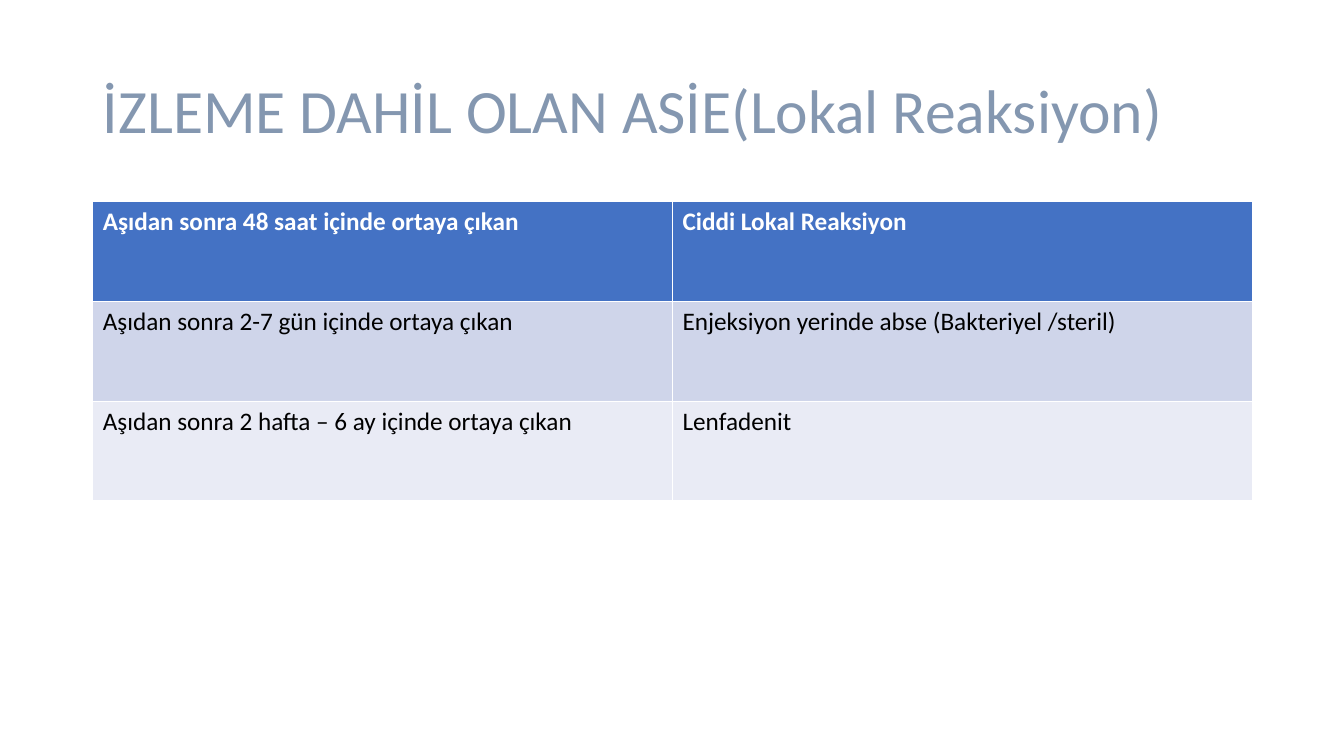
from dataclasses import dataclass

from pptx import Presentation
from pptx import util as u
from pptx.dml import color
from pptx.enum import text


@dataclass(frozen=True)
class Theme:
    font: str = "Calibri"
    title_size: int = 44
    table_size: int = 18
    title_color: str = "8497B0"
    header_text: str = "FFFFFF"
    body_text: str = "000000"
    header_fill: str = "4472C4"
    band_fills: tuple = ("CFD5EA", "E9EBF5")


def write_text(frame, content, *, font, size, ink, bold=False, line_spacing=1.0):
    paragraph = frame.paragraphs[0]
    paragraph.alignment = text.PP_ALIGN.LEFT
    paragraph.line_spacing = line_spacing
    run = paragraph.add_run()
    run.text = content
    run.font.name = font
    run.font.size = u.Pt(size)
    run.font.bold = bold
    run.font.color.rgb = color.RGBColor.from_string(ink)


class SlideBuilder:
    def __init__(self, slide, theme):
        self.slide = slide
        self.theme = theme

    def title(self, content, left, top, width, height):
        shape = self.slide.shapes.title
        shape.left, shape.top = u.Inches(left), u.Inches(top)
        shape.width, shape.height = u.Inches(width), u.Inches(height)
        frame = shape.text_frame
        frame.word_wrap = True
        frame.auto_size = text.MSO_AUTO_SIZE.NONE
        frame.vertical_anchor = text.MSO_ANCHOR.MIDDLE
        write_text(frame, content, font=self.theme.font, size=self.theme.title_size,
                   ink=self.theme.title_color, line_spacing=0.9)

    def table(self, rows, left, top, width, row_height):
        theme = self.theme
        table = self.slide.shapes.add_table(
            len(rows), len(rows[0]), u.Inches(left), u.Inches(top),
            u.Inches(width), u.Inches(row_height * len(rows))).table
        for row_index, values in enumerate(rows):
            is_header = row_index == 0
            fill = theme.header_fill if is_header else theme.band_fills[(row_index - 1) % 2]
            ink = theme.header_text if is_header else theme.body_text
            for column_index, value in enumerate(values):
                cell = table.cell(row_index, column_index)
                cell.fill.solid()
                cell.fill.fore_color.rgb = color.RGBColor.from_string(fill)
                write_text(cell.text_frame, value, font=theme.font,
                           size=theme.table_size, ink=ink, bold=is_header)


def main():
    presentation = Presentation()
    presentation.slide_width = u.Inches(13.33)
    presentation.slide_height = u.Inches(7.5)
    slide = presentation.slides.add_slide(presentation.slide_layouts.get_by_name("Title Only"))

    builder = SlideBuilder(slide, Theme())
    builder.title("İZLEME DAHİL OLAN ASİE(Lokal Reaksiyon)", 0.92, 0.4, 11.5, 1.45)
    builder.table([
        ("Aşıdan sonra 48 saat içinde ortaya çıkan", "Ciddi Lokal Reaksiyon"),
        ("Aşıdan sonra 2-7 gün içinde ortaya çıkan", "Enjeksiyon yerinde abse (Bakteriyel /steril)"),
        ("Aşıdan sonra 2 hafta – 6 ay içinde ortaya çıkan", "Lenfadenit"),
    ], 0.92, 2, 11.5, 0.99)

    presentation.save("out.pptx")


if __name__ == "__main__":
    main()
